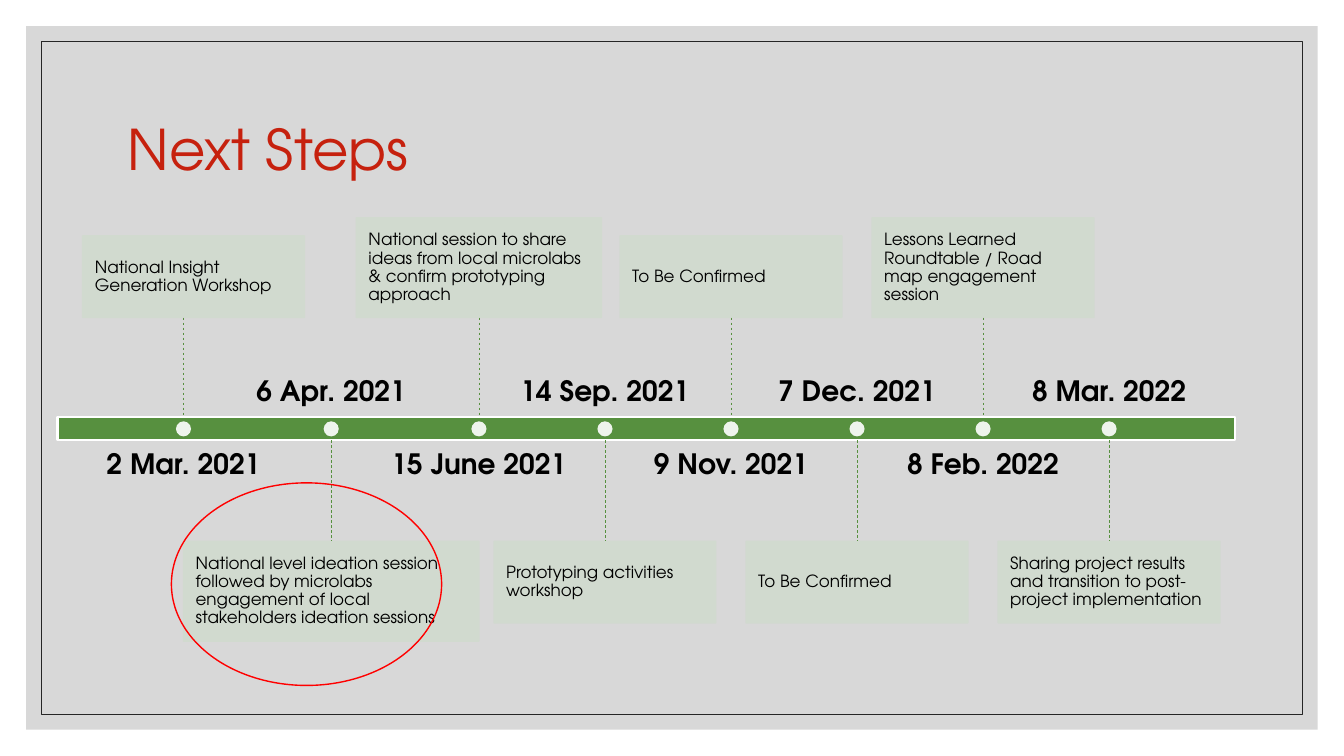
"""Build the Next Steps timeline slide on a grid of thirty rows of square cells."""
import pptx
import pptx.dml.color
import pptx.enum.dml
import pptx.enum.shapes
import pptx.enum.text
import pptx.oxml.ns
import pptx.oxml.xmlchemy
import pptx.util
import lxml.etree

THEME = {
    "font": "TeX Gyre Adventor",
    "title_size": 40, "date_size": 20, "card_size": 12,
    "title": "C6210E", "text": "000000", "panel": "BFBFBF", "frame": "262626",
    "bar": "57903F", "card": "D1DBCF", "white": "FFFFFF", "highlight": "FF0000",
}
SHAPES = pptx.enum.shapes.MSO_SHAPE
ANCHORS = pptx.enum.text.MSO_ANCHOR
ALIGNS = pptx.enum.text.PP_ALIGN
COLOUR = pptx.dml.color.RGBColor.from_string

deck = pptx.Presentation()
deck.slide_width = pptx.util.Inches(13.33)
deck.slide_height = pptx.util.Inches(7.5)
page = deck.slides.add_slide(deck.slide_layouts[6])
ROWS = 30
CELL = deck.slide_height / ROWS
COLUMNS = deck.slide_width / CELL


def draw(kind, left, top, width, height, fill=None, line=None, weight=1, opacity=100):
    """Add a shape placed in cells; fill and line name theme colours."""
    shape = page.shapes.add_shape(kind, *(round(n * CELL) for n in (left, top, width, height)))
    shape.shadow.inherit = False
    if fill:
        shape.fill.solid()
        shape.fill.fore_color.rgb = COLOUR(THEME[fill])
    else:
        shape.fill.background()
    if line:
        shape.line.color.rgb = COLOUR(THEME[line])
        shape.line.width = pptx.util.Pt(weight)
    else:
        shape.line.fill.background()
    if opacity < 100:
        for colour in shape.element.spPr.iter(pptx.oxml.ns.qn("a:srgbClr")):
            alpha = lxml.etree.SubElement(colour, pptx.oxml.ns.qn("a:alpha"))
            alpha.set("val", str(opacity * 1000))
    return shape


def write(box, text, size, colour="text", bold=False, align=ALIGNS.LEFT,
          anchor=ANCHORS.MIDDLE, inset=0.0, spacing=0.9):
    """Put one formatted paragraph into a box; inset is in cells."""
    frame = box.text_frame
    frame.word_wrap = True
    frame.vertical_anchor = anchor
    frame.margin_left = frame.margin_right = round(inset * CELL)
    frame.margin_top = frame.margin_bottom = round(inset * CELL)
    para = frame.paragraphs[0]
    para.alignment = align
    para.line_spacing = spacing
    span = para.add_run()
    span.text = text
    span.font.name = THEME["font"]
    span.font.size = pptx.util.Pt(THEME[size])
    span.font.bold = bold
    span.font.color.rgb = COLOUR(THEME[colour])


for margin, look in ((1.04, {"fill": "panel", "opacity": 60}),
                     (1.64, {"line": "frame", "weight": 0.5})):
    draw(SHAPES.RECTANGLE, margin, margin, COLUMNS - 2 * margin, ROWS - 2 * margin, **look)

title_box = page.shapes.add_textbox(*(round(n * CELL) for n in (4.68, 2.8, 44, 6)))
write(title_box, "Next Steps", "title_size", colour="title", inset=0.4, spacing=1.07)

BAR_TOP, BAR_HEIGHT = 16.56, 0.92
BAR_BOTTOM = BAR_TOP + BAR_HEIGHT
BAR_MIDDLE = BAR_TOP + BAR_HEIGHT / 2
UPPER_CARD_BOTTOM, LOWER_CARD_TOP = 12.6, 21.48
DATE_WIDTH, DATE_HEIGHT, DATE_GAP = 8, 2.64, 0.4
SHORT, TALL = 3.24, 3.96
DOT = 0.6
FIRST_CENTRE, WIDE_STEP, STEP, WIDE_STEPS = 7.28, 5.86, 5, 2

milestones = [
    ("2 Mar. 2021", "National Insight Generation Workshop", 8.8, SHORT, 0.4),
    ("6 Apr. 2021", "National level ideation session followed by microlabs "
     "engagement of local stakeholders ideation sessions", 11.72, TALL, 0),
    ("15 June 2021", "National session to share ideas from local microlabs "
     "& confirm prototyping approach", 9.72, TALL, 0),
    ("14 Sep. 2021", "Prototyping activities workshop", 8.8, SHORT, 0),
    ("9 Nov. 2021", "To Be Confirmed", 8.8, SHORT, 0),
    ("7 Dec. 2021", "To Be Confirmed", 8.8, SHORT, 0),
    ("8 Feb. 2022", "Lessons Learned Roundtable / Road map engagement session", 8.8, TALL, 0),
    ("8 Mar. 2022", "Sharing project results and transition to post-project implementation",
     8.8, SHORT, 0),
]

draw(SHAPES.RECTANGLE, 2.28, BAR_TOP, 46.72, BAR_HEIGHT, fill="bar", line="white", weight=1.5)

for index, (date, event, width, height, shift) in enumerate(milestones):
    wide = min(index, WIDE_STEPS)
    centre = FIRST_CENTRE + wide * WIDE_STEP + (index - wide) * STEP
    if index % 2 == 0:
        card_top = UPPER_CARD_BOTTOM - height
        stem = (UPPER_CARD_BOTTOM, BAR_TOP)
        date_top, date_anchor = BAR_BOTTOM + DATE_GAP, ANCHORS.TOP
    else:
        card_top = LOWER_CARD_TOP
        stem = (BAR_BOTTOM, LOWER_CARD_TOP)
        date_top, date_anchor = BAR_TOP - DATE_GAP - DATE_HEIGHT, ANCHORS.BOTTOM

    date_box = page.shapes.add_textbox(*(round(n * CELL) for n in (
        centre - DATE_WIDTH / 2, date_top, DATE_WIDTH, DATE_HEIGHT)))
    write(date_box, date, "date_size", bold=True, align=ALIGNS.CENTER, anchor=date_anchor)

    card = draw(SHAPES.RECTANGLE, centre - width / 2 + shift, card_top, width, height,
                fill="card", line="card", opacity=90)
    write(card, event, "card_size", inset=0.48)

    link = page.shapes.add_connector(pptx.enum.shapes.MSO_CONNECTOR.STRAIGHT, *(
        round(n * CELL) for n in (centre, stem[0], centre, stem[1])))
    link.line.color.rgb = COLOUR(THEME["bar"])
    link.line.width = pptx.util.Pt(0.5)
    link.line.dash_style = pptx.enum.dml.MSO_LINE.DASH
    lxml.etree.SubElement(link.element.spPr, pptx.oxml.ns.qn("a:effectLst"))

    draw(SHAPES.OVAL, centre - DOT / 2, BAR_MIDDLE - DOT / 2, DOT, DOT, fill="white", opacity=90)

draw(SHAPES.OVAL, 6.8, 19.16, 10.72, 8.04, line="highlight")

deck.save("out.pptx")
